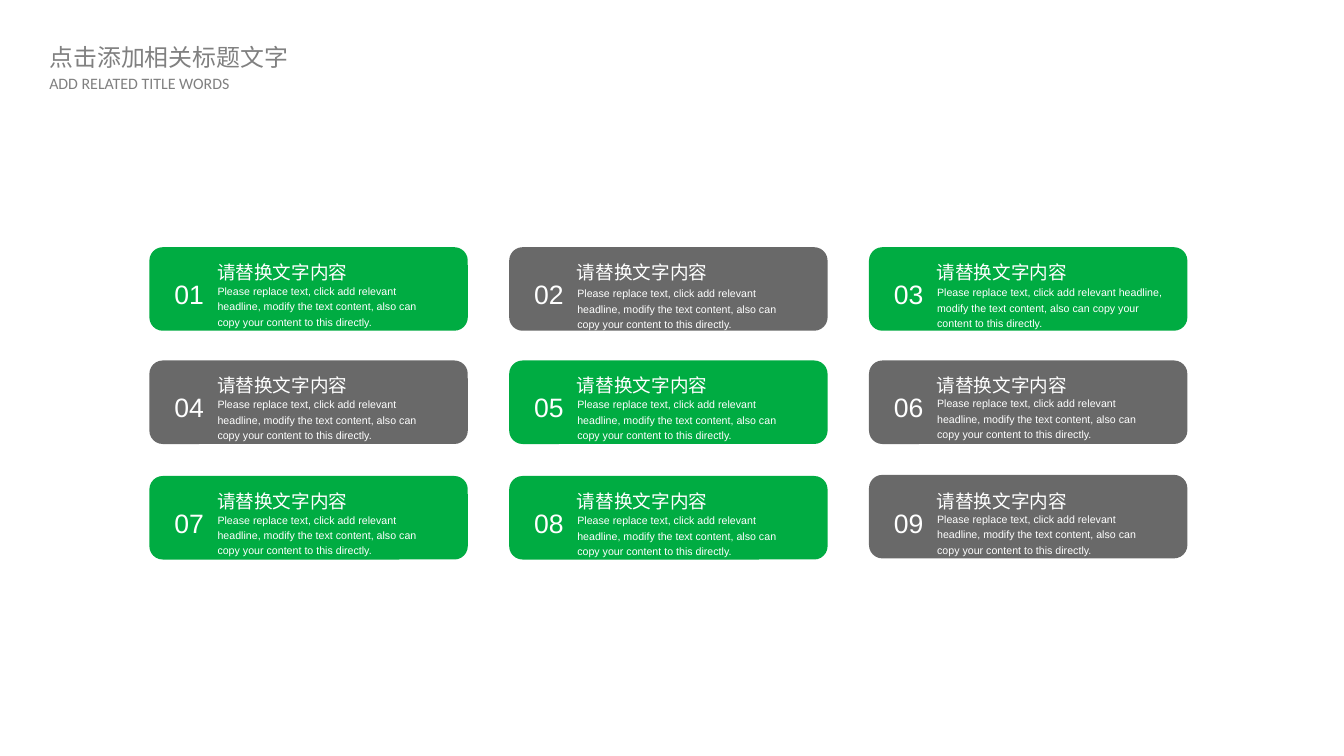
from dataclasses import dataclass

from lxml import etree
from pptx import Presentation
from pptx.dml.color import RGBColor
from pptx.enum.shapes import MSO_SHAPE
from pptx.enum.text import MSO_ANCHOR, MSO_AUTO_SIZE, PP_ALIGN
from pptx.oxml.ns import qn
from pptx.util import Cm, Pt

ROUNDED = MSO_SHAPE.ROUNDED_RECTANGLE
TOP = MSO_ANCHOR.TOP
NO_AUTOFIT = MSO_AUTO_SIZE.NONE
LEFT, CENTER = PP_ALIGN.LEFT, PP_ALIGN.CENTER

GREEN = RGBColor(0x00, 0xAC, 0x42)
DARK_GRAY = RGBColor(0x69, 0x69, 0x69)
TITLE_GRAY = RGBColor(0x80, 0x80, 0x80)
WHITE = RGBColor(0xFF, 0xFF, 0xFF)

COLUMNS = 3
FIRST_LEFT, COLUMN_PITCH = 3.97, 9.56
ROW_TOPS = (6.57, 9.58, 12.65)
CARD_WIDTH, CARD_HEIGHT = 8.46, 2.22
HEADLINE = "请替换文字内容"
DETAIL = (
    "Please replace text, click add relevant headline, modify the text content, "
    "also can copy your content to this directly."
)


@dataclass(frozen=True)
class Card:
    color: RGBColor
    lift: float = 0
    detail_drop: float = 0.94
    detail_width: float = 5.77


CARDS = (
    Card(GREEN),
    Card(DARK_GRAY, detail_drop=1.0),
    Card(GREEN, detail_drop=0.97, detail_width=6.07),
    Card(DARK_GRAY),
    Card(GREEN),
    Card(DARK_GRAY, detail_drop=0.91),
    Card(GREEN),
    Card(GREEN, detail_drop=0.95),
    Card(DARK_GRAY, lift=0.03, detail_drop=0.92),
)


def write(holder, text: str, *, left: float, top: float, width: float, height: float,
          size: float, color: RGBColor = WHITE, font: str = "Arial", align=LEFT,
          spacing: float = 1.2, margins: tuple[float, float] = (0, 0),
          wrap: bool = True) -> None:
    holder.left, holder.top = Cm(left), Cm(top)
    holder.width, holder.height = Cm(width), Cm(height)
    frame = holder.text_frame
    frame.auto_size = NO_AUTOFIT
    frame.word_wrap = wrap
    frame.vertical_anchor = TOP
    frame.margin_left = frame.margin_right = Cm(margins[0])
    frame.margin_top = frame.margin_bottom = Cm(margins[1])
    paragraph = frame.paragraphs[0]
    paragraph.alignment = align
    paragraph.line_spacing = spacing
    run = paragraph.add_run()
    run.text = text
    run.font.size = Pt(size)
    run.font.color.rgb = color
    run.font.name = font
    east_asian = etree.SubElement(run.font._element, qn("a:ea"))
    east_asian.set("typeface", font)


def add_label(slide, text: str, *, width: float, height: float, **text_format) -> None:
    right, bottom = Cm(width), Cm(height)
    outline = slide.shapes.build_freeform(0, 0)
    outline.add_line_segments([(right, 0), (right, bottom), (0, bottom)], close=True)
    label = outline.convert_to_shape()
    label.shadow.inherit = False
    label.fill.background()
    label.line.fill.background()
    write(label, text, width=width, height=height, **text_format)


def add_card(slide, index: int, card: Card) -> None:
    row, column = divmod(index, COLUMNS)
    left, top = FIRST_LEFT + column * COLUMN_PITCH, ROW_TOPS[row]
    panel = slide.shapes.add_shape(
        ROUNDED, Cm(left), Cm(top - card.lift), Cm(CARD_WIDTH), Cm(CARD_HEIGHT))
    panel.adjustments[0] = 0.16
    panel.shadow.inherit = False
    panel.fill.solid()
    panel.fill.fore_color.rgb = card.color
    panel.line.fill.background()
    add_label(slide, f"{index + 1:02d}", left=left + 0.47, top=top + 0.65,
              width=1.17, height=1.02, size=20, align=CENTER)
    add_label(slide, HEADLINE, left=left + 1.8, top=top + 0.25,
              width=6.88, height=0.71, size=14)
    add_label(slide, DETAIL, left=left + 1.81, top=top + card.detail_drop,
              width=card.detail_width, height=1.19, size=8)


def main() -> None:
    presentation = Presentation()
    presentation.slide_width, presentation.slide_height = Cm(35.71), Cm(20.09)
    slide = presentation.slides.add_slide(presentation.slide_layouts[5])
    for index, card in enumerate(CARDS):
        add_card(slide, index, card)
    heading = {"left": 1.04, "color": TITLE_GRAY, "spacing": 1.0,
               "margins": (0.27, 0.13), "wrap": False}
    write(slide.shapes.title, "点击添加相关标题文字", top=1.0, width=6.96,
          height=1.04, size=18, font="Noto Sans CJK SC", **heading)
    subtitle = slide.shapes.add_textbox(0, 0, 0, 0)
    write(subtitle, "ADD RELATED TITLE WORDS", top=1.83, width=5.38,
          height=0.79, size=12, font="Calibri", **heading)
    presentation.save("out.pptx")


if __name__ == "__main__":
    main()
